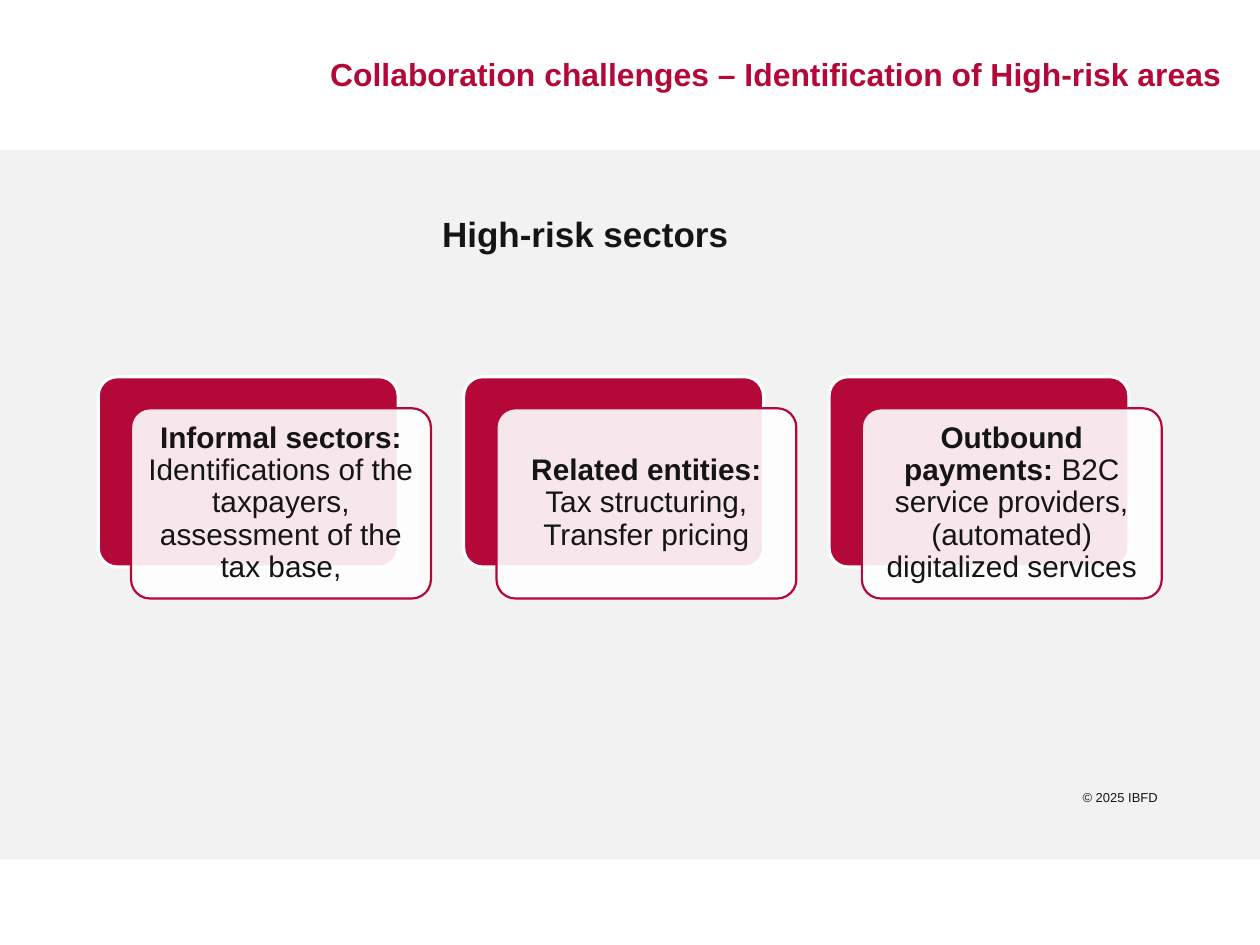
import pptx
import pptx.dml.color
import pptx.enum.shapes
import pptx.enum.text
import pptx.oxml.ns
import pptx.util
from dataclasses import dataclass
from lxml import etree

Inches = pptx.util.Inches
Pt = pptx.util.Pt
Shapes = pptx.enum.shapes.MSO_SHAPE
Align = pptx.enum.text.PP_ALIGN
Anchor = pptx.enum.text.MSO_ANCHOR


@dataclass(frozen=True)
class Theme:
    font: str = "Arial"
    accent: str = "B30838"
    ink: str = "151515"
    band: str = "F2F2F2"
    white: str = "FFFFFF"
    title_size: float = 18.2
    heading_size: float = 20
    card_size: float = 17
    footer_size: float = 7.4


THEME = Theme()

CARDS = [
    ("Informal sectors: ",
     "Identifications of the taxpayers, assessment of the tax base,"),
    ("Related entities: ", "Tax structuring, Transfer pricing"),
    ("Outbound payments: ",
     "B2C service providers, (automated) digitalized services"),
]
CARD_LEFT, CARD_TOP, CARD_STEP = 0.78, 2.99, 2.9
CARD_WIDTH, CARD_HEIGHT = 2.38, 1.51
FRONT_SHIFT_X, FRONT_SHIFT_Y = 0.26, 0.25


def rgb(value):
    return pptx.dml.color.RGBColor.from_string(value)


def apply_format(target, values):
    for name, value in values.items():
        setattr(target, name, value)


def write_text(shape, runs, size, color, alignment, anchor, inset=0, spacing=1.0):
    frame = shape.text_frame
    margins = ("margin_left", "margin_top", "margin_right", "margin_bottom")
    apply_format(frame, {
        "word_wrap": True,
        "auto_size": pptx.enum.text.MSO_AUTO_SIZE.NONE,
        "vertical_anchor": anchor,
        **dict.fromkeys(margins, Inches(inset)),
    })
    paragraph = frame.paragraphs[0]
    apply_format(paragraph, {"alignment": alignment, "line_spacing": spacing})
    for text, bold in runs:
        run = paragraph.add_run()
        run.text = text
        apply_format(run.font, {"name": THEME.font, "size": Pt(size), "bold": bold})
        run.font.color.rgb = rgb(color)


def add_box(slide, kind, left, top, width, height, fill, line=None, line_width=0):
    shape = slide.shapes.add_shape(
        kind, Inches(left), Inches(top), Inches(width), Inches(height))
    shape.shadow.inherit = False
    shape.fill.solid()
    shape.fill.fore_color.rgb = rgb(fill)
    if line:
        shape.line.color.rgb = rgb(line)
        shape.line.width = Pt(line_width)
    else:
        shape.line.fill.background()
    if kind == Shapes.ROUNDED_RECTANGLE:
        shape.adjustments[0] = 0.1
    return shape


def set_opacity(shape, percent):
    color = shape.fill._xPr.find(".//" + pptx.oxml.ns.qn("a:srgbClr"))
    alpha = etree.SubElement(color, pptx.oxml.ns.qn("a:alpha"))
    alpha.set("val", str(percent * 1000))


def add_title(slide, text):
    title = slide.shapes.title
    apply_format(title, {"left": Inches(2.62), "top": Inches(0.46),
                         "width": Inches(7.18), "height": Inches(0.38)})
    write_text(title, [(text, True)], THEME.title_size, THEME.accent,
               Align.LEFT, Anchor.TOP, spacing=0.93)


def add_label(slide, left, top, width, height, text, **text_format):
    label = slide.shapes.add_textbox(
        Inches(left), Inches(top), Inches(width), Inches(height))
    bold = text_format.pop("bold", False)
    write_text(label, [(text, bold)], color=THEME.ink,
               anchor=Anchor.MIDDLE, **text_format)


def add_card(slide, left, heading, body):
    add_box(slide, Shapes.ROUNDED_RECTANGLE, left, CARD_TOP, CARD_WIDTH, CARD_HEIGHT,
            THEME.accent, THEME.white, 1.75)
    front = add_box(slide, Shapes.ROUNDED_RECTANGLE,
                    left + FRONT_SHIFT_X, CARD_TOP + FRONT_SHIFT_Y,
                    CARD_WIDTH, CARD_HEIGHT, THEME.white, THEME.accent, 1.25)
    set_opacity(front, 90)
    write_text(front, [(heading, True), (body, False)], THEME.card_size, THEME.ink,
               Align.CENTER, Anchor.MIDDLE, inset=0.07, spacing=0.9)


def main():
    presentation = pptx.Presentation()
    presentation.slide_width = Inches(10)
    presentation.slide_height = Inches(7.5)
    slide = presentation.slides.add_slide(presentation.slide_layouts[5])

    add_box(slide, Shapes.RECTANGLE, 0, 1.19, 10, 5.63, THEME.band)
    add_title(slide, "Collaboration challenges – Identification of High-risk areas")
    add_label(slide, 2.79, 1.63, 3.71, 0.44, "High-risk sectors", bold=True,
              size=THEME.heading_size, alignment=Align.CENTER)
    for index, (heading, body) in enumerate(CARDS):
        add_card(slide, CARD_LEFT + index * CARD_STEP, heading, body)
    add_label(slide, 5.2, 6.27, 3.99, 0.11, "© 2025 IBFD",
              size=THEME.footer_size, alignment=Align.RIGHT)

    presentation.save("out.pptx")


if __name__ == "__main__":
    main()
